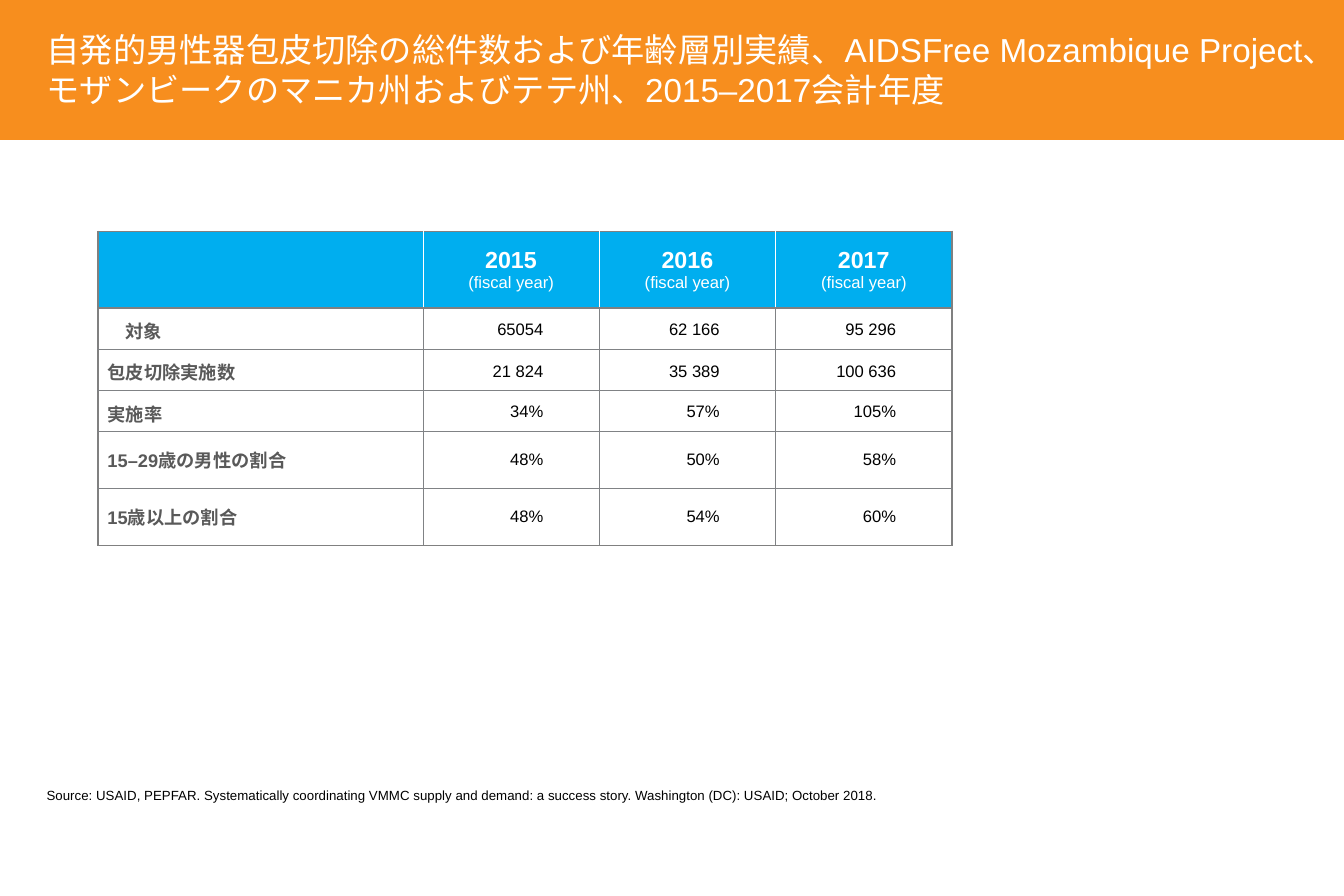
"""Build the slide on male circumcision results in Mozambique, 2015–2017."""
import pptx
import pptx.dml.color
import pptx.enum.shapes
import pptx.enum.text
import pptx.oxml
import pptx.oxml.ns
import pptx.util

Pt = pptx.util.Pt
RGBColor = pptx.dml.color.RGBColor
ALIGN = pptx.enum.text.PP_ALIGN
MIDDLE = pptx.enum.text.MSO_ANCHOR.MIDDLE

TITLE = "自発的男性器包皮切除の総件数および年齢層別実績、AIDSFree Mozambique Project、モザンビークのマニカ州およびテテ州、2015–2017会計年度"
SOURCE = ("Source: USAID, PEPFAR. Systematically coordinating VMMC supply and demand: "
          "a success story. Washington (DC): USAID; October 2018.")
YEARS = ["2015", "2016", "2017"]
YEAR_NOTE = "(fiscal year)"
RESULTS = [
    ("対象", "65054", "62 166", "95 296"),
    ("包皮切除実施数", "21 824", "35 389", "100 636"),
    ("実施率", "34%", "57%", "105%"),
    ("15–29歳の男性の割合", "48%", "50%", "58%"),
    ("15歳以上の割合", "48%", "54%", "60%"),
]
LABEL_INDENTS = [11, 0, 0, 0, 0]
VALUE_TOPS = [2.2, 2.2, 0.7, 0, 0]
COLUMN_WIDTHS = [195.9] + [106.3] * 3
ROW_HEIGHTS = [45.8] + [24.6] * 3 + [34.4] * 2

FONT = "Arial"
ORANGE = RGBColor(0xF7, 0x8E, 0x1E)
BLUE = RGBColor(0x00, 0xAE, 0xEF)
WHITE = RGBColor(0xFF, 0xFF, 0xFF)
BLACK = RGBColor(0, 0, 0)
LABEL_GREY = RGBColor(0x59, 0x59, 0x59)
FRAME_GREY = RGBColor(0x80, 0x80, 0x80)
GRID_GREY = RGBColor(0x80, 0x82, 0x85)


def style(para, size, color, bold=False, align=ALIGN.LEFT):
    para.alignment = align
    for span in para.runs:
        span.font.name = FONT
        span.font.size = Pt(size)
        span.font.bold = bold
        span.font.color.rgb = color


def set_margins(target, left, top, right, bottom):
    target.margin_left, target.margin_top = Pt(left), Pt(top)
    target.margin_right, target.margin_bottom = Pt(right), Pt(bottom)


def set_borders(cell, row, column):
    last_row, last_column = len(RESULTS), len(YEARS)
    inner = (WHITE if row == 0 else GRID_GREY, 0.5)
    grid, frame = (GRID_GREY, 0.5), (FRAME_GREY, 1)
    sides = {
        "lnL": frame if column == 0 else inner,
        "lnR": frame if column == last_column else inner,
        "lnT": frame if row <= 1 else grid,
        "lnB": frame if row in (0, last_row) else grid,
    }
    properties = cell._tc.get_or_add_tcPr()
    for index, (side, (color, width)) in enumerate(sides.items()):
        properties.insert(index, pptx.oxml.parse_xml(
            f'<a:{side} {pptx.oxml.ns.nsdecls("a")} w="{Pt(width)}">'
            f'<a:solidFill><a:srgbClr val="{color}"/></a:solidFill></a:{side}>'))


def fill_cell(cell, row, column):
    cell.vertical_anchor = MIDDLE
    paragraphs = cell.text_frame.paragraphs
    if row == 0:
        cell.fill.solid()
        cell.fill.fore_color.rgb = BLUE
        set_margins(cell, 0, 8.6, 0, 8.6)
        if column:
            cell.text_frame.text = YEARS[column - 1] + "\n" + YEAR_NOTE
            year, note = cell.text_frame.paragraphs
            style(year, 14, WHITE, True, ALIGN.CENTER)
            style(note, 10, WHITE, False, ALIGN.CENTER)
    else:
        cell.fill.background()
        paragraphs[0].text = RESULTS[row - 1][column]
        if column == 0:
            set_margins(cell, 5.8 + LABEL_INDENTS[row - 1], 5.8, 0, 5.8)
            style(paragraphs[0], 11, LABEL_GREY, True)
        else:
            set_margins(cell, 0, VALUE_TOPS[row - 1], 33.8, 0)
            style(paragraphs[0], 10, BLACK, False, ALIGN.RIGHT)
    set_borders(cell, row, column)


def add_banner(page):
    box = page.shapes.add_shape(pptx.enum.shapes.MSO_SHAPE.RECTANGLE,
                                Pt(0), Pt(-0.7), Pt(810), Pt(85))
    box.shadow.inherit = False
    box.fill.solid()
    box.fill.fore_color.rgb = ORANGE
    box.line.fill.background()
    frame = box.text_frame
    frame.word_wrap = True
    frame.vertical_anchor = MIDDLE
    set_margins(frame, 28.1, 3.6, 0, 3.6)
    frame.text = TITLE
    style(frame.paragraphs[0], 20, WHITE)


def add_results(page):
    table = page.shapes.add_table(
        len(ROW_HEIGHTS), len(COLUMN_WIDTHS), Pt(59), Pt(139.5),
        Pt(sum(COLUMN_WIDTHS)), Pt(sum(ROW_HEIGHTS))).table
    table.first_row = table.horz_banding = False
    for column, width in enumerate(COLUMN_WIDTHS):
        table.columns[column].width = Pt(width)
    for row, height in enumerate(ROW_HEIGHTS):
        table.rows[row].height = Pt(height)
        for column in range(len(COLUMN_WIDTHS)):
            fill_cell(table.cell(row, column), row, column)


def add_source(page):
    box = page.shapes.add_textbox(Pt(28.1), Pt(474.5), Pt(512), Pt(9.4))
    frame = box.text_frame
    frame.word_wrap = False
    set_margins(frame, 0, 0, 0, 0)
    frame.text = SOURCE
    style(frame.paragraphs[0], 8, BLACK)


def main():
    deck = pptx.Presentation()
    deck.slide_width, deck.slide_height = Pt(810), Pt(540)
    page = deck.slides.add_slide(deck.slide_layouts[6])
    add_banner(page)
    add_source(page)
    add_results(page)
    deck.save("out.pptx")


if __name__ == "__main__":
    main()
